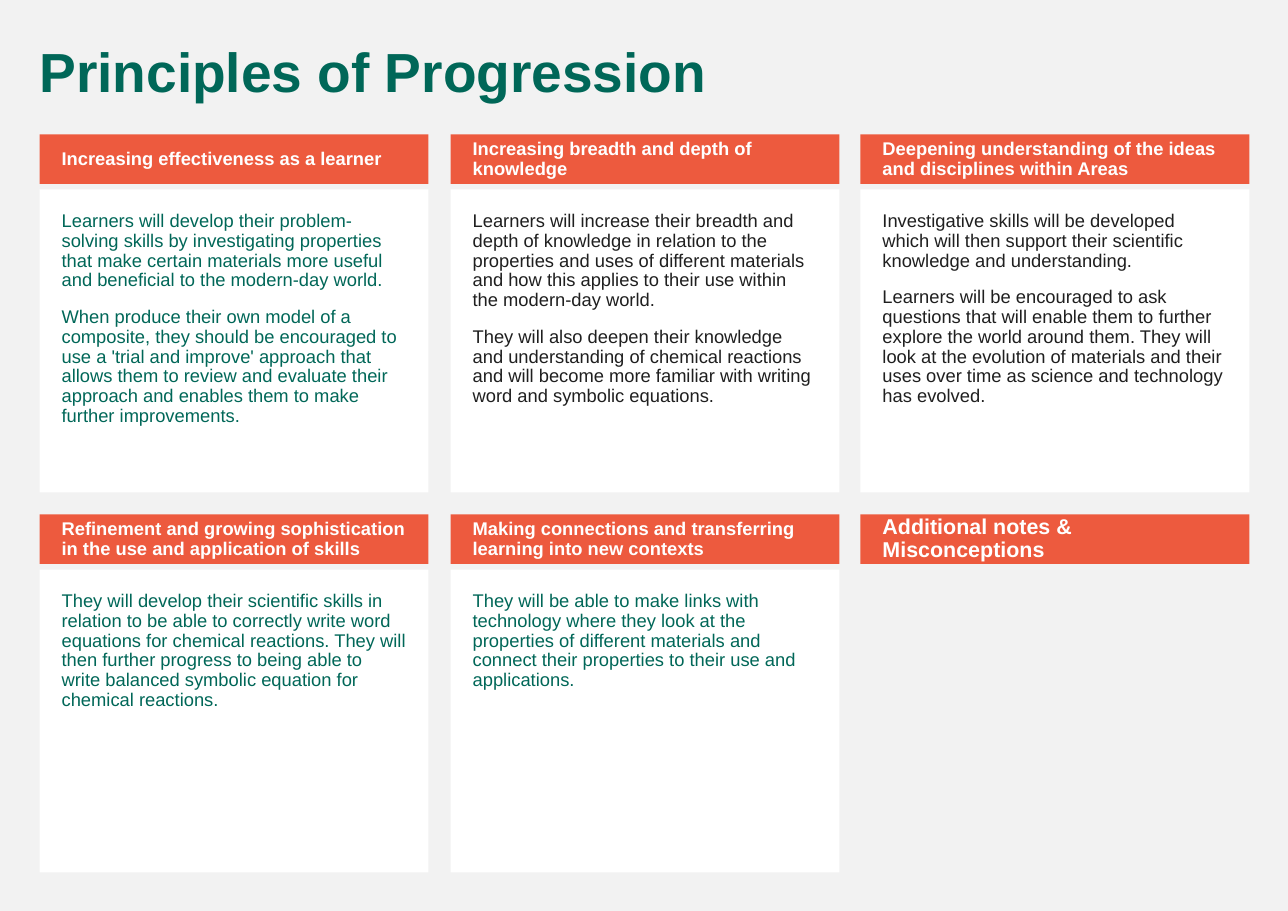
from dataclasses import dataclass

from pptx import Presentation
from pptx.dml.color import RGBColor
from pptx.enum.shapes import MSO_SHAPE
from pptx.enum.text import MSO_ANCHOR as Anchor, PP_ALIGN as Align
from pptx.util import Inches, Pt


@dataclass(frozen=True)
class Theme:
    font: str = "Arial"
    background: str = "F2F2F2"
    panel: str = "FFFFFF"
    accent: str = "ED5A3E"
    green: str = "006758"
    dark: str = "1F1F1F"
    white: str = "FFFFFF"
    title_size: int = 36
    large_size: int = 14
    text_size: int = 12


theme = Theme()


def write_text(shape, paragraphs, color, size, bold=False):
    frame = shape.text_frame
    frame.word_wrap = True
    frame.text = "\n".join(paragraphs)
    for paragraph in frame.paragraphs:
        paragraph.alignment = Align.LEFT
        paragraph.line_spacing = 0.9
        paragraph.space_before = Pt(11)
        paragraph.font.name = theme.font
        paragraph.font.size = Pt(size)
        paragraph.font.bold = bold
        paragraph.font.color.rgb = RGBColor.from_string(color)


def add_box(left, top, height, fill, insets, anchor):
    """Add a borderless column-wide rectangle; insets run left, top, right, bottom."""
    box = slide.shapes.add_shape(
        MSO_SHAPE.RECTANGLE, Inches(left), Inches(top), Inches(COLUMN_WIDTH), Inches(height))
    box.shadow.inherit = False
    box.fill.solid()
    box.fill.fore_color.rgb = RGBColor.from_string(fill)
    box.line.fill.background()
    frame = box.text_frame
    frame.margin_left, frame.margin_top, frame.margin_right, frame.margin_bottom = map(Inches, insets)
    frame.vertical_anchor = anchor
    return box


COLUMN_LEFTS = (0.36, 4.09, 7.81)
COLUMN_WIDTH = 3.53
FIRST_ROW_TOP, ROW_PITCH = 1.22, 3.45
HEADING_HEIGHT, PANEL_OFFSET, PANEL_HEIGHT = 0.45, 0.5, 2.75

# Heading, heading size, panel text colour, panel paragraphs
principles = [
    ("Increasing effectiveness as a learner", theme.text_size, theme.green, [
        "Learners will develop their problem-solving skills by investigating properties "
        "that make certain materials more useful and beneficial to the modern-day world.",
        "When produce their own model of a composite, they should be encouraged to "
        "use a 'trial and improve' approach that allows them to review and evaluate "
        "their approach and enables them to make further improvements.",
    ]),
    ("Increasing breadth and depth of knowledge", theme.text_size, theme.dark, [
        "Learners will increase their breadth and depth of knowledge in relation to the "
        "properties and uses of different materials and how this applies to their use "
        "within the modern-day world.",
        "They will also deepen their knowledge and understanding of chemical reactions "
        "and will become more familiar with writing word and symbolic equations.",
    ]),
    ("Deepening understanding of the ideas and disciplines within Areas", theme.text_size, theme.dark, [
        "Investigative skills will be developed which will then support their scientific "
        "knowledge and understanding.",
        "Learners will be encouraged to ask questions that will enable them to "
        "further explore the world around them. They will look at the evolution of materials "
        "and their uses over time as science and technology has evolved.",
    ]),
    ("Refinement and growing sophistication in the use and application of skills",
     theme.text_size, theme.green, [
        "They will develop their scientific skills in relation to be able to correctly "
        "write word equations for chemical reactions. They will then further progress to "
        "being able to write balanced symbolic equation for chemical reactions.",
    ]),
    ("Making connections and transferring learning into new contexts", theme.text_size, theme.green, [
        "They will be able to make links with technology where they look at the properties "
        "of different materials and connect their properties to their use and applications.",
    ]),
    ("Additional notes & Misconceptions", theme.large_size, theme.green, []),
]

presentation = Presentation()
presentation.slide_width = Inches(11.69)
presentation.slide_height = Inches(8.27)
slide = presentation.slides.add_slide(presentation.slide_layouts[6])
slide.background.fill.solid()
slide.background.fill.fore_color.rgb = RGBColor.from_string(theme.background)

title = slide.shapes.add_textbox(Inches(0.26), Inches(0.36), Inches(11.08), Inches(0.65))
write_text(title, ["Principles of Progression"], theme.green, theme.title_size, bold=True)

for index, (heading_text, heading_size, panel_color, paragraphs) in enumerate(principles):
    row, column = divmod(index, len(COLUMN_LEFTS))
    left = COLUMN_LEFTS[column]
    top = FIRST_ROW_TOP + row * ROW_PITCH
    if paragraphs:
        panel = add_box(left, top + PANEL_OFFSET, PANEL_HEIGHT, theme.panel,
                        (0.2, 0.2, 0.2, 0.2), Anchor.TOP)
        write_text(panel, paragraphs, panel_color, theme.text_size)
    heading = add_box(left, top, HEADING_HEIGHT, theme.accent,
                      (0.2, 0.05, 0.1, 0.05), Anchor.MIDDLE)
    write_text(heading, [heading_text], theme.white, heading_size, bold=True)

presentation.save("out.pptx")
